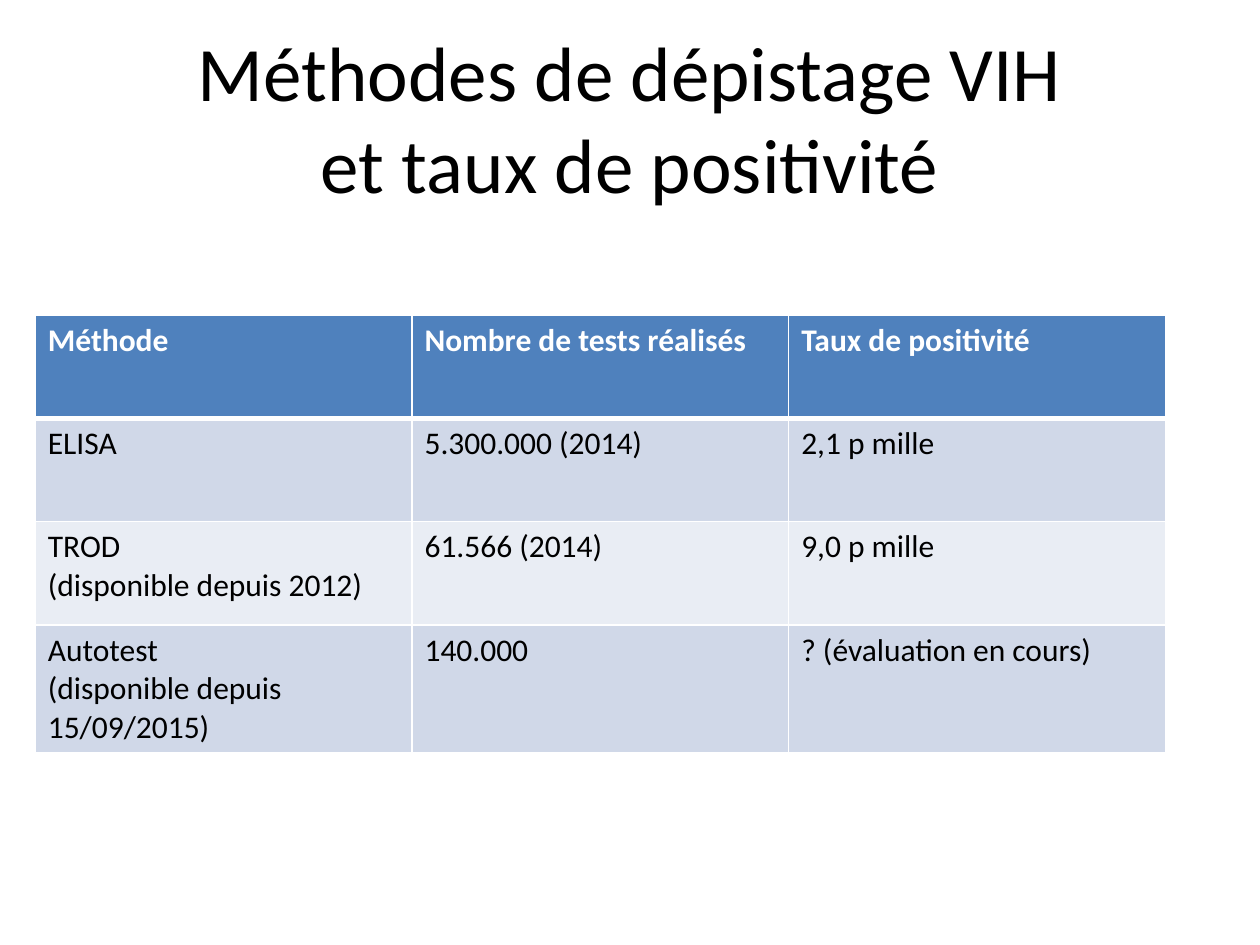
from lxml import etree
from pptx import Presentation
from pptx import util as u
from pptx.dml.color import RGBColor
from pptx.enum import text
from pptx.oxml.ns import qn

TITLE = "Méthodes de dépistage VIH\vet taux de positivité"
ROWS = [
    ["Méthode", "Nombre de tests réalisés", "Taux de positivité"],
    ["ELISA", "5.300.000 (2014)", "2,1 p mille"],
    ["TROD\v(disponible depuis 2012)", "61.566 (2014)", "9,0 p mille"],
    ["Autotest\n(disponible depuis 15/09/2015)", "140.000", "? (évaluation en cours)"],
]


def color(value):
    return RGBColor.from_string(value)


class SlideBuilder:
    font = "Calibri"
    black, white = "000000", "FFFFFF"
    header_fill, band_fills = "4F81BD", ("D0D8E8", "E9EDF4")

    def __init__(self, slide):
        self.slide = slide

    def format_text(self, frame, size, font_color, bold=False):
        values = {"name": self.font, "size": u.Pt(size), "bold": bold}
        for paragraph in frame.paragraphs:
            for run in paragraph.runs:
                for name, value in values.items():
                    setattr(run.font, name, value)
                run.font.color.rgb = color(font_color)

    def title(self, wording, box):
        shape = self.slide.shapes.title
        for name, value in zip(("left", "top", "width", "height"), box):
            setattr(shape, name, u.Inches(value))
        frame = shape.text_frame
        frame.text = wording
        frame.auto_size = text.MSO_AUTO_SIZE.NONE
        frame.vertical_anchor = text.MSO_ANCHOR.MIDDLE
        for paragraph in frame.paragraphs:
            paragraph.alignment = text.PP_ALIGN.CENTER
        self.format_text(frame, 44, self.black)

    def borders(self, cell, widths):
        """Draw the cell's borders; widths maps a side (L, R, T, B) to points."""
        properties = cell._tc.get_or_add_tcPr()
        for position, (side, width) in enumerate(widths.items()):
            line = etree.Element(qn(f"a:ln{side}"), w=str(u.Pt(width)))
            fill = etree.SubElement(line, qn("a:solidFill"))
            etree.SubElement(fill, qn("a:srgbClr"), val=self.white)
            properties.insert(position, line)

    def table(self, rows, left, top, column_width, row_height):
        row_count, column_count = len(rows), len(rows[0])
        table = self.slide.shapes.add_table(
            row_count, column_count, u.Inches(left), u.Inches(top),
            u.Inches(column_width * column_count), u.Inches(row_height * row_count),
        ).table
        for row_index, row in enumerate(rows):
            header = row_index == 0
            fill = self.header_fill if header else self.band_fills[(row_index - 1) % 2]
            widths = {"L": 1, "R": 1, "T": 3 if row_index == 1 else 1, "B": 3 if header else 1}
            for column_index, wording in enumerate(row):
                cell = table.cell(row_index, column_index)
                cell.text = wording
                cell.fill.solid()
                cell.fill.fore_color.rgb = color(fill)
                self.format_text(cell.text_frame, 18, self.white if header else self.black, header)
                self.borders(cell, widths)


def main():
    presentation = Presentation()
    presentation.slide_width, presentation.slide_height = u.Inches(10), u.Inches(7.5)
    title_only = presentation.slide_layouts[5]
    builder = SlideBuilder(presentation.slides.add_slide(title_only))
    builder.title(TITLE, (0.5, 0.3, 9, 1.25))
    builder.table(ROWS, left=0.28, top=2.5, column_width=2.99, row_height=0.82)
    presentation.save("out.pptx")


if __name__ == "__main__":
    main()
